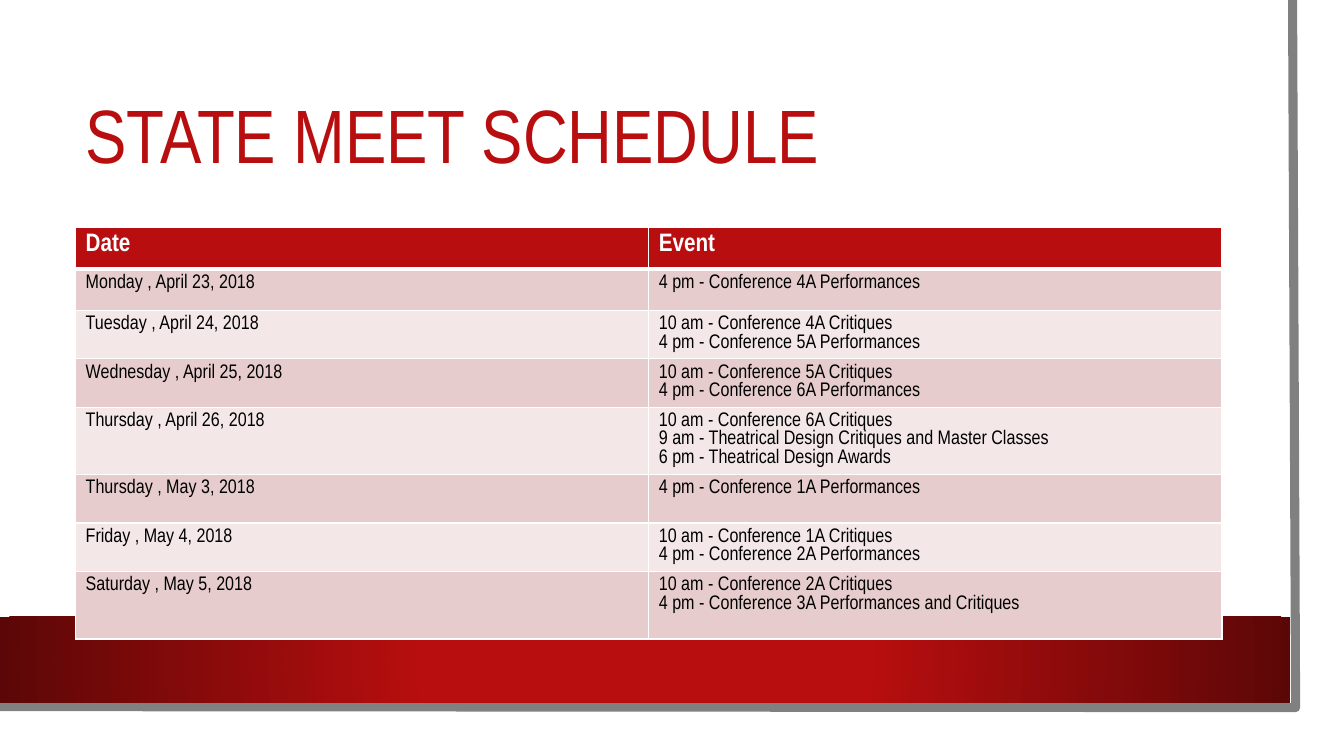
import pptx
import pptx.util
import pptx.dml.color
import pptx.enum.shapes
import pptx.enum.text
import pptx.oxml
import pptx.oxml.ns

FONT = "Arial Narrow"
RED = "B80E0F"
WHITE = "FFFFFF"
Inches = pptx.util.Inches


def color(value):
    return pptx.dml.color.RGBColor.from_string(value)


def write(para, text, size, value, bold=False):
    span = para.add_run()
    span.text = text
    span.font.name = FONT
    span.font.size = pptx.util.Pt(size)
    span.font.bold = bold
    span.font.color.rgb = color(value)


deck = pptx.Presentation()
deck.slide_width = Inches(13.33)
deck.slide_height = Inches(7.5)
page = deck.slides.add_slide(deck.slide_layouts[5])
page.background.fill.solid()
page.background.fill.fore_color.rgb = color(WHITE)

left, width = Inches(0.75), Inches(11.37)

title = page.shapes.title
title.left, title.top, title.width, title.height = left, Inches(0.75), width, Inches(1.26)
title.text_frame.word_wrap = True
title.text_frame.vertical_anchor = pptx.enum.text.MSO_ANCHOR.MIDDLE
heading = title.text_frame.paragraphs[0]
heading.alignment = pptx.enum.text.PP_ALIGN.LEFT
heading.line_spacing = 0.9
write(heading, "STATE MEET SCHEDULE", 54, RED)

outline = page.shapes.build_freeform(Inches(12.82), 0)
outline.add_line_segments([(Inches(12.85), Inches(7.02)), (0, Inches(7.01))], close=False)
edge = outline.convert_to_shape()
edge.shadow.inherit = False
edge.fill.background()
edge.line.color.rgb = color("808080")
edge.line.width = pptx.util.Pt(6.5)

band = page.shapes.add_shape(
    pptx.enum.shapes.MSO_SHAPE.RECTANGLE, 0, Inches(6.12), Inches(12.8), Inches(0.85))
band.shadow.inherit = False
band.line.fill.background()
band.fill.gradient()
for stop, (position, value) in zip(band.fill.gradient_stops, [(0.34, RED), (1, "5C0707")]):
    stop.position = position
    stop.color.rgb = color(value)
direction = band.element.spPr.find(".//" + pptx.oxml.ns.qn("a:lin"))
direction.getparent().replace(direction, pptx.oxml.parse_xml(
    f'<a:path {pptx.oxml.ns.nsdecls("a")} path="circle">'
    '<a:fillToRect l="50000" t="50000" r="50000" b="50000"/></a:path>'))

schedule = [
    ("Date", ["Event"], 1),
    ("Monday , April 23, 2018", ["4 pm - Conference 4A Performances"], 1),
    ("Tuesday , April 24, 2018",
     ["10 am - Conference 4A Critiques", "4 pm - Conference 5A Performances"], 2),
    ("Wednesday , April 25, 2018",
     ["10 am - Conference 5A Critiques", "4 pm - Conference 6A Performances"], 2),
    ("Thursday , April 26, 2018",
     ["10 am - Conference 6A Critiques",
      "9 am - Theatrical Design Critiques and Master Classes",
      "6 pm - Theatrical Design Awards"], 3),
    ("Thursday , May 3, 2018", ["4 pm - Conference 1A Performances"], 2),
    ("Friday , May 4, 2018",
     ["10 am - Conference 1A Critiques", "4 pm - Conference 2A Performances"], 2),
    ("Saturday , May 5, 2018",
     ["10 am - Conference 2A Critiques",
      "4 pm - Conference 3A Performances and Critiques"], 3),
]
heights = [Inches(max(0.41, 0.1 + 0.18 * slots + 0.01 * slots)) for _, _, slots in schedule]
table = page.shapes.add_table(
    len(schedule), 2, left, Inches(2.26), width, sum(heights)).table

for row, (date, events, _) in enumerate(schedule):
    table.rows[row].height = heights[row]
    header = row == 0
    size, ink = (18, WHITE) if header else (14, "000000")
    shade = RED if header else ("F3E7E7", "E6CCCC")[row % 2]
    for column, lines in enumerate([[date], events]):
        cell = table.cell(row, column)
        for side in "LRTB":
            thick = header and side == "B" or row == 1 and side == "T"
            weight = pptx.util.Pt(3 if thick else 1)
            cell._tc.get_or_add_tcPr().append(pptx.oxml.parse_xml(
                f'<a:ln{side} {pptx.oxml.ns.nsdecls("a")} w="{weight}">'
                f'<a:solidFill><a:srgbClr val="{WHITE}"/></a:solidFill></a:ln{side}>'))
        cell.fill.solid()
        cell.fill.fore_color.rgb = color(shade)
        for index, line in enumerate(lines):
            frame = cell.text_frame
            para = frame.add_paragraph() if index else frame.paragraphs[0]
            write(para, line, size, ink, header)

deck.save("out.pptx")
